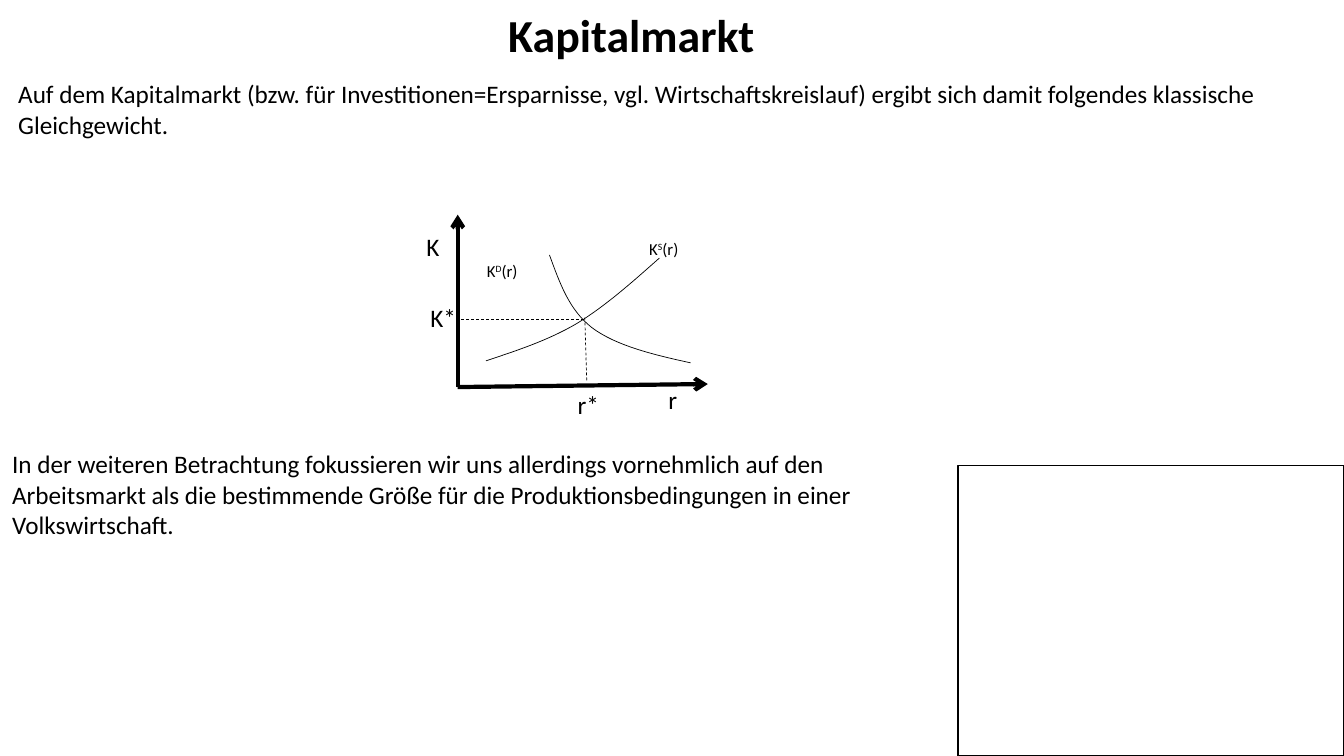
"""Build the slide on the capital market equilibrium."""
from lxml import etree
from pptx import Presentation
from pptx.dml.color import RGBColor
from pptx.enum.dml import MSO_LINE
from pptx.enum.shapes import MSO_CONNECTOR, MSO_SHAPE
from pptx.enum.text import MSO_ANCHOR, MSO_AUTO_SIZE, PP_ALIGN
from pptx.oxml.ns import qn
from pptx.util import Inches, Pt

STRAIGHT = MSO_CONNECTOR.STRAIGHT
RECTANGLE = MSO_SHAPE.RECTANGLE
DASH = MSO_LINE.DASH
TOP = MSO_ANCHOR.TOP
LEFT = PP_ALIGN.LEFT
NO_AUTOFIT = MSO_AUTO_SIZE.NONE

COLORS = {"ink": "000000"}
FONT = "Calibri"
TITLE = ("Kapitalmarkt", (4.95, 0.03, 2.64, 0.65), 32.7)
BODY_TEXTS = [
    ("Auf dem Kapitalmarkt (bzw. für Investitionen=Ersparnisse, vgl. Wirtschaftskreislauf) "
     "ergibt sich damit folgendes klassische Gleichgewicht.", (0.09, 0.74, 13.09, 0.71)),
    ("In der weiteren Betrachtung fokussieren wir uns allerdings vornehmlich auf den "
     "Arbeitsmarkt als die bestimmende Größe für die Produktionsbedingungen in einer "
     "Volkswirtschaft.", (0.03, 4.41, 9.24, 1.01)),
]
AXIS_LABELS = [
    ("K", (4.13, 2.25, 0.4, 0.4)),
    ("r", (6.53, 3.76, 0.29, 0.4)),
    ("K*", (4.17, 2.95, 0.46, 0.4)),
    ("r*", (5.63, 3.81, 0.52, 0.4)),
]
CURVE_LABELS = [
    ("D", (4.73, 2.54, 0.52, 0.3)),
    ("S", (6.34, 2.32, 0.5, 0.3)),
]
ORIGIN = (4.54, 3.84)
AXIS_ENDS = [(7.02, 3.81), (4.54, 2.13)]
GUIDES = [((5.8, 3.15), (5.82, 3.79)), ((5.79, 3.17), (4.54, 3.17))]
SUPPLY = [(4.82, 3.58), (5.12, 3.48), (5.43, 3.38), (5.72, 3.21),
          (6, 3.04), (6.27, 2.8), (6.54, 2.56)]
DEMAND = [(5.45, 2.53), (5.55, 2.8), (5.64, 3.07), (5.87, 3.25),
          (6.11, 3.43), (6.48, 3.52), (6.85, 3.6)]
FRAME = (9.5, 4.62, 3.83, 2.88)
CURVE_STEPS = 16


def ink():
    return RGBColor.from_string(COLORS["ink"])


def add_run(paragraph, text, size, bold=False, superscript=False):
    run = paragraph.add_run()
    run.text = text
    run.font.name = FONT
    run.font.size = Pt(size)
    run.font.bold = bold
    run.font.color.rgb = ink()
    if superscript:
        run._r.get_or_add_rPr().set("baseline", "30000")


def set_margins(text_frame, right=0.09):
    text_frame.margin_left = Inches(0.09)
    text_frame.margin_right = Inches(right)
    text_frame.margin_top = text_frame.margin_bottom = Inches(0.04)


def add_text_box(slide, box, wrap):
    text_frame = slide.shapes.add_textbox(*map(Inches, box)).text_frame
    text_frame.word_wrap = wrap
    return text_frame


def set_line(shape, width):
    shape.line.color.rgb = ink()
    shape.line.width = Pt(width)


def add_line(slide, start, end, width):
    line = slide.shapes.add_connector(STRAIGHT, *map(Inches, start + end))
    set_line(line, width)
    etree.SubElement(line._element.spPr, qn("a:effectLst"))
    return line


def bezier_points(controls):
    """Return points along a chain of cubic curves."""
    points = [controls[0]]
    for first in range(0, len(controls) - 1, 3):
        segment = controls[first:first + 4]
        for step in range(1, CURVE_STEPS + 1):
            t = step / CURVE_STEPS
            weights = ((1 - t) ** 3, 3 * t * (1 - t) ** 2, 3 * t ** 2 * (1 - t), t ** 3)
            points.append(tuple(sum(weight * point[axis] for weight, point in zip(weights, segment))
                                for axis in (0, 1)))
    return points


def add_curve(slide, controls):
    points = [(Inches(x), Inches(y)) for x, y in bezier_points(controls)]
    builder = slide.shapes.build_freeform(*points[0])
    builder.add_line_segments(points[1:], close=False)
    curve = builder.convert_to_shape()
    curve.shadow.inherit = False
    curve.fill.background()
    set_line(curve, 0.5)


def add_title(slide):
    text, box, size = TITLE
    title = slide.shapes.title
    title.left, title.top, title.width, title.height = map(Inches, box)
    text_frame = title.text_frame
    text_frame.word_wrap = True
    text_frame.auto_size = NO_AUTOFIT
    text_frame.vertical_anchor = TOP
    set_margins(text_frame, right=0)
    text_frame.paragraphs[0].alignment = LEFT
    add_run(text_frame.paragraphs[0], text, size, bold=True)


def add_diagram(slide):
    for end in AXIS_ENDS:
        axis = add_line(slide, ORIGIN, end, 3)
        etree.SubElement(axis.line._get_or_add_ln(), qn("a:tailEnd"), type="arrow")
    for controls in (SUPPLY, DEMAND):
        add_curve(slide, controls)
    for start, end in GUIDES:
        add_line(slide, start, end, 0.5).line.dash_style = DASH
    for text, box in AXIS_LABELS:
        add_run(add_text_box(slide, box, False).paragraphs[0], text, 18)
    for letter, box in CURVE_LABELS:
        paragraph = add_text_box(slide, box, False).paragraphs[0]
        add_run(paragraph, "K", 12)
        add_run(paragraph, letter, 12, superscript=True)
        add_run(paragraph, "(r)", 12)


def main():
    presentation = Presentation()
    presentation.slide_width = Inches(13.33)
    presentation.slide_height = Inches(7.5)
    slide = presentation.slides.add_slide(presentation.slide_layouts[5])
    add_title(slide)
    for text, box in BODY_TEXTS:
        text_frame = add_text_box(slide, box, True)
        set_margins(text_frame)
        add_run(text_frame.paragraphs[0], text, 18)
    add_diagram(slide)
    frame = slide.shapes.add_shape(RECTANGLE, *map(Inches, FRAME))
    frame.shadow.inherit = False
    frame.fill.background()
    set_line(frame, 1)
    presentation.save("out.pptx")


if __name__ == "__main__":
    main()
